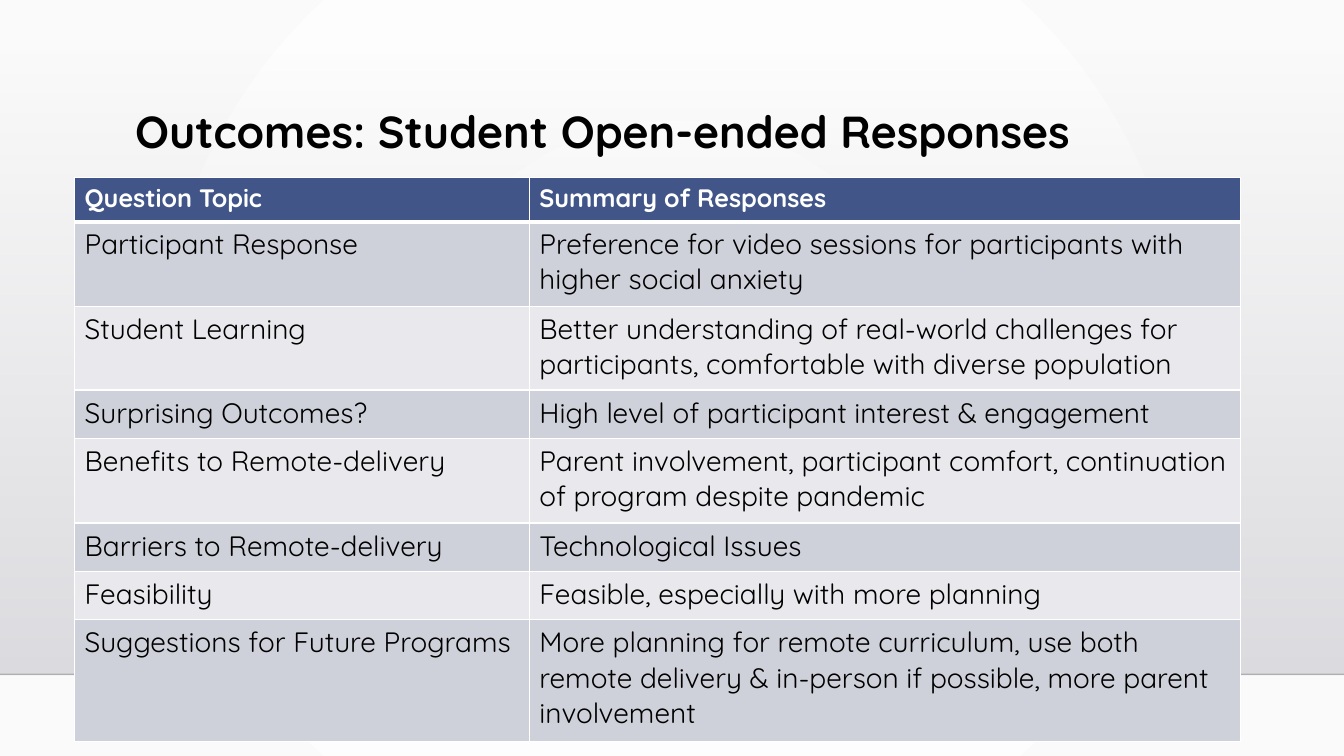
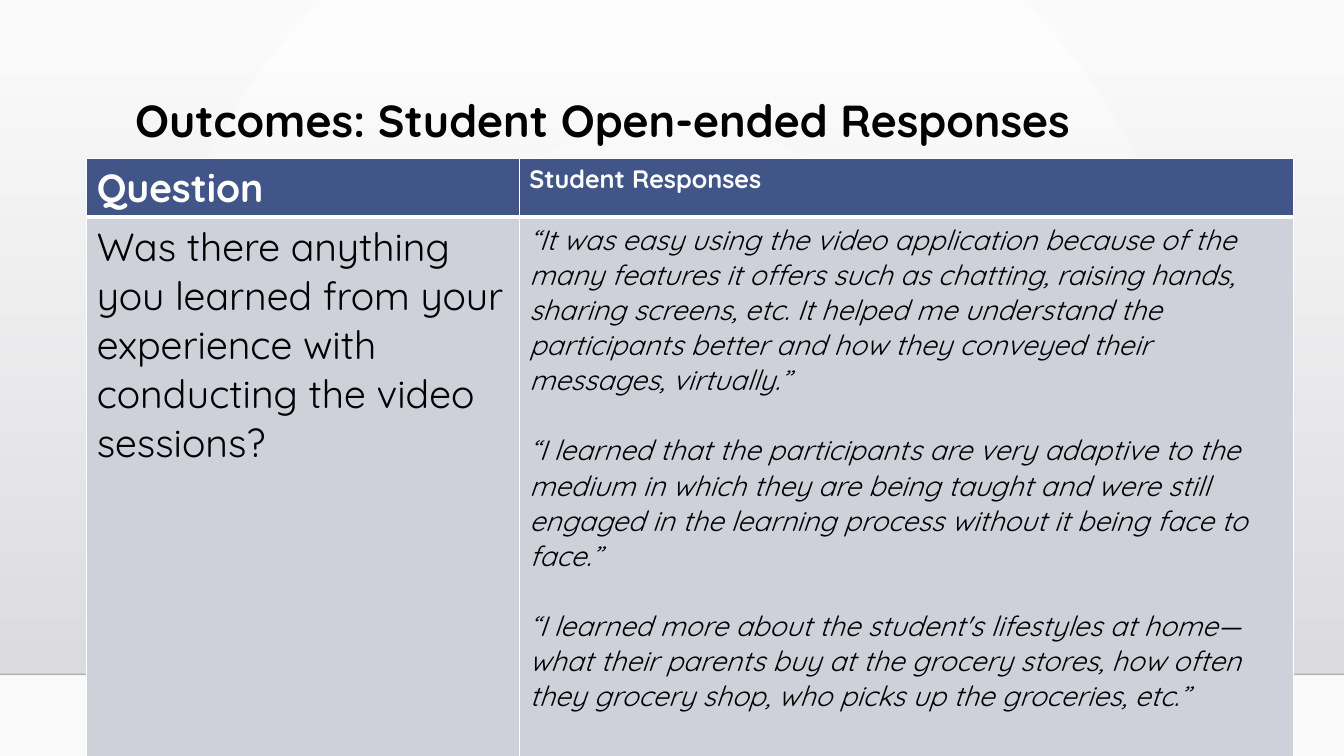
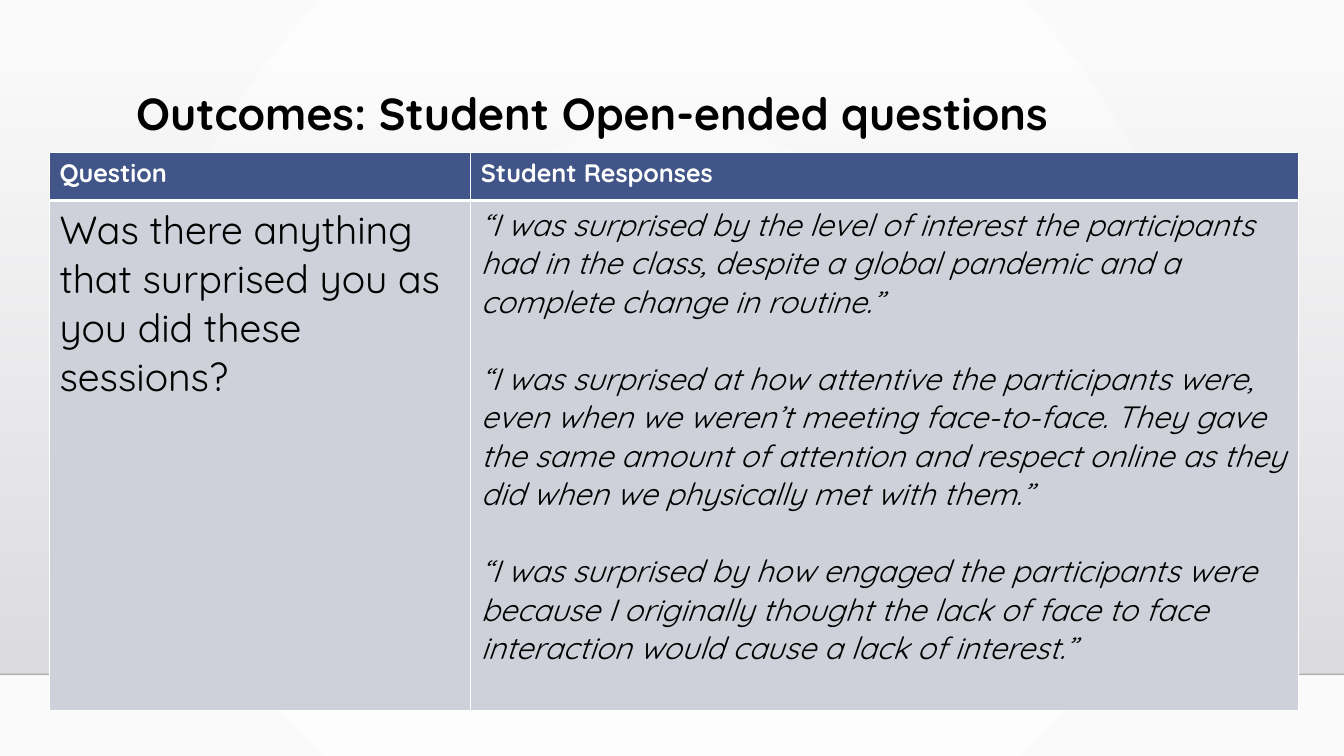
from dataclasses import dataclass

from lxml import etree
from pptx import Presentation
from pptx import util as u
from pptx.dml import color
from pptx.enum import shapes, text
from pptx.oxml import ns


@dataclass(frozen=True)
class Theme:
    font: str = "Quicksand"
    ink: str = "000000"
    white: str = "FFFFFF"
    page_edge: str = "FAFAFA"
    band_top: str = "DCDCE0"
    band_bottom: str = "DEDEE2"
    rule: str = "000001"
    header: str = "415588"
    stripes: tuple = ("CFD1DA", "E9E9ED")
    title_size: int = 32
    thin: int = 1
    thick: int = 3
    line_height: float = 1.25  # natural line height of the font


THEME = Theme()
SLIDE_W, SLIDE_H = 13.33, 7.5
BAND_TOP, BAND_BOTTOM = 0.51, 6.69
TITLE_W, TITLE_H = 10.5, 1.15

# Content: a body cell is a list of paragraphs
SLIDES = [
    dict(
        title="Outcomes: Student Open-ended Responses",
        title_at=(1.24, 1.04), table_at=(0.74, 1.76),
        columns=(4.51, 7.05),
        rows=(0.44, 0.84, 0.83, 0.48, 0.84, 0.48, 0.48, 1.21),
        header=("Question Topic", "Summary of Responses"),
        header_sizes=(18, 18), body_sizes=(20, 20), quotes=False,
        body=[
            (["Participant Response"],
             ["Preference for video sessions for participants with higher social anxiety"]),
            (["Student Learning"],
             ["Better understanding of real-world challenges for participants, "
              "comfortable with diverse population"]),
            (["Surprising Outcomes?"],
             ["High level of participant interest & engagement"]),
            (["Benefits to Remote-delivery"],
             ["Parent involvement, participant comfort, continuation of program "
              "despite pandemic"]),
            (["Barriers to Remote-delivery"], ["Technological Issues"]),
            (["Feasibility"], ["Feasible, especially with more planning"]),
            (["Suggestions for Future Programs"],
             ["More planning for remote curriculum, use both remote delivery & "
              "in-person if possible, more parent involvement"]),
        ],
    ),
    dict(
        title="Outcomes: Student Open-ended Responses",
        title_at=(1.24, 0.93), table_at=(0.86, 1.57),
        columns=(4.29, 7.68), rows=(0.55, 5.38),
        header=("Question", "Student Responses"),
        header_sizes=(28, 18), body_sizes=(28, 20), quotes=True,
        body=[
            (["Was there anything you learned from your experience with "
              "conducting the video sessions?"],
             ["“It was easy using the video application because of the many features "
              "it offers such as chatting, raising hands, sharing screens, etc. It "
              "helped me understand the participants better and how they conveyed "
              "their messages, virtually.”",
              "“I learned that the participants are very adaptive to the medium in "
              "which they are being taught and were still engaged in the learning "
              "process without it being face to face.”",
              "“I learned more about the student's lifestyles at home—what their "
              "parents buy at the grocery stores, how often they grocery shop, who "
              "picks up the groceries, etc.”"]),
        ],
    ),
    dict(
        title="Outcomes: Student Open-ended questions",
        title_at=(1.25, 0.86), table_at=(0.49, 1.51),
        columns=(4.18, 8.21), rows=(0.48, 5.06),
        header=("Question", "Student Responses"),
        header_sizes=(18, 18), body_sizes=(28, 22), quotes=True,
        body=[
            (["Was there anything that surprised you as you did these sessions?"],
             ["“I was surprised by the level of interest the participants had in the "
              "class, despite a global pandemic and a complete change in routine.”",
              "“I was surprised at how attentive the participants were, even when we "
              "weren’t meeting face-to-face. They gave the same amount of attention "
              "and respect online as they did when we physically met with them.”",
              "“I was surprised by how engaged the participants were because I "
              "originally thought the lack of face to face interaction would cause a "
              "lack of interest.”"]),
        ],
    ),
]


def rgb(value):
    return color.RGBColor.from_string(value)


def sub(parent, tag, **attributes):
    return etree.SubElement(parent, ns.qn(tag), attributes)


def set_gradient(fill, *stops):
    fill.gradient()
    for position, (stop, value) in enumerate(zip(fill.gradient_stops, stops)):
        stop.color.rgb = rgb(value)
        stop.position = position


def add_run(paragraph, words, size, ink, bold=False, italic=False):
    run = paragraph.add_run()
    run.text = words
    run.font.name = THEME.font
    run.font.size = u.Pt(size)
    run.font.bold = bold
    run.font.italic = italic
    run.font.color.rgb = rgb(ink)


# Shared backdrop
def set_background(master):
    set_gradient(master.background.fill, THEME.white, THEME.page_edge)
    gradient = master.element.xpath(".//p:bg//a:gradFill")[0]
    gradient.remove(gradient.find(ns.qn("a:lin")))
    circle = sub(gradient, "a:path", path="circle")
    sub(circle, "a:fillToRect", l="50000", t="50000", r="50000", b="50000")


def add_backdrop(master, slide):
    """Draw the band and its rule, then move them to the master."""
    band = slide.shapes.add_shape(
        shapes.MSO_SHAPE.RECTANGLE, 0, u.Inches(BAND_TOP),
        u.Inches(SLIDE_W), u.Inches(BAND_BOTTOM - BAND_TOP))
    band.shadow.inherit = False
    band.line.fill.background()
    set_gradient(band.fill, THEME.band_top, THEME.band_bottom)
    band.fill.gradient_angle = 270
    sub(band.element.xpath(".//a:gs/a:srgbClr")[0], "a:alpha", val="0")

    rule = slide.shapes.add_connector(
        shapes.MSO_CONNECTOR.STRAIGHT, 0, u.Inches(BAND_BOTTOM),
        u.Inches(SLIDE_W), u.Inches(BAND_BOTTOM))
    rule.line.width = u.Pt(THEME.thin)
    rule.line.color.rgb = rgb(THEME.rule)
    sub(rule.element.xpath(".//a:ln//a:srgbClr")[0], "a:alpha", val="20000")
    sub(rule.element.spPr, "a:effectLst")

    tree = master.shapes.element
    for offset, part in enumerate((band, rule)):
        part.element.xpath(".//p:cNvPr")[0].set("id", str(101 + offset))
        tree.insert(2 + offset, part.element)


# Slide parts
def fill_title(slide, content):
    title = slide.shapes.title
    title.left, title.top = map(u.Inches, content["title_at"])
    title.width, title.height = u.Inches(TITLE_W), u.Inches(TITLE_H)
    frame = title.text_frame
    frame.auto_size = text.MSO_AUTO_SIZE.NONE
    frame.vertical_anchor = text.MSO_ANCHOR.TOP
    heading = frame.paragraphs[0]
    heading.alignment = text.PP_ALIGN.LEFT
    heading.line_spacing = 0.9
    add_run(heading, content["title"], THEME.title_size, THEME.ink, bold=True)


def set_borders(cell, top, bottom):
    properties = cell._tc.get_or_add_tcPr()
    widths = (("L", THEME.thin), ("R", THEME.thin), ("T", top), ("B", bottom))
    for index, (side, width) in enumerate(widths):
        border = sub(properties, f"a:ln{side}", w=str(u.Pt(width)))
        sub(sub(border, "a:solidFill"), "a:srgbClr", val=THEME.white)
        properties.insert(index, border)


def fill_cell(cell, paragraphs, size, fill, ink, **style):
    cell.fill.solid()
    cell.fill.fore_color.rgb = rgb(fill)
    frame = cell.text_frame
    for index, words in enumerate(paragraphs):
        paragraph = frame.add_paragraph() if index else frame.paragraphs[0]
        if index:
            paragraph.space_before = u.Pt(size * THEME.line_height)
        add_run(paragraph, words, size, ink, **style)


def add_responses(slide, content):
    left, top = content["table_at"]
    columns, rows = content["columns"], content["rows"]
    responses = slide.shapes.add_table(
        len(rows), len(columns), u.Inches(left), u.Inches(top),
        u.Inches(sum(columns)), u.Inches(sum(rows))).table
    responses.horz_banding = False
    for column, width in zip(responses.columns, columns):
        column.width = u.Inches(width)
    for row, height in zip(responses.rows, rows):
        row.height = u.Inches(height)

    for c, words in enumerate(content["header"]):
        cell = responses.cell(0, c)
        fill_cell(cell, [words], content["header_sizes"][c],
                  THEME.header, THEME.white, bold=True)
        set_borders(cell, THEME.thin, THEME.thick)
    for r, cells in enumerate(content["body"], start=1):
        stripe = THEME.stripes[(r - 1) % 2]
        for c, paragraphs in enumerate(cells):
            cell = responses.cell(r, c)
            fill_cell(cell, paragraphs, content["body_sizes"][c], stripe,
                      THEME.ink, italic=content["quotes"] and c == 1)
            set_borders(cell, THEME.thick if r == 1 else THEME.thin, THEME.thin)


def main():
    deck = Presentation()
    deck.slide_width, deck.slide_height = u.Inches(SLIDE_W), u.Inches(SLIDE_H)
    title_only = deck.slide_layouts[5]
    set_background(deck.slide_master)
    for index, content in enumerate(SLIDES):
        slide = deck.slides.add_slide(title_only)
        if index == 0:
            add_backdrop(deck.slide_master, slide)
        fill_title(slide, content)
        add_responses(slide, content)
    deck.save("out.pptx")


if __name__ == "__main__":
    main()
